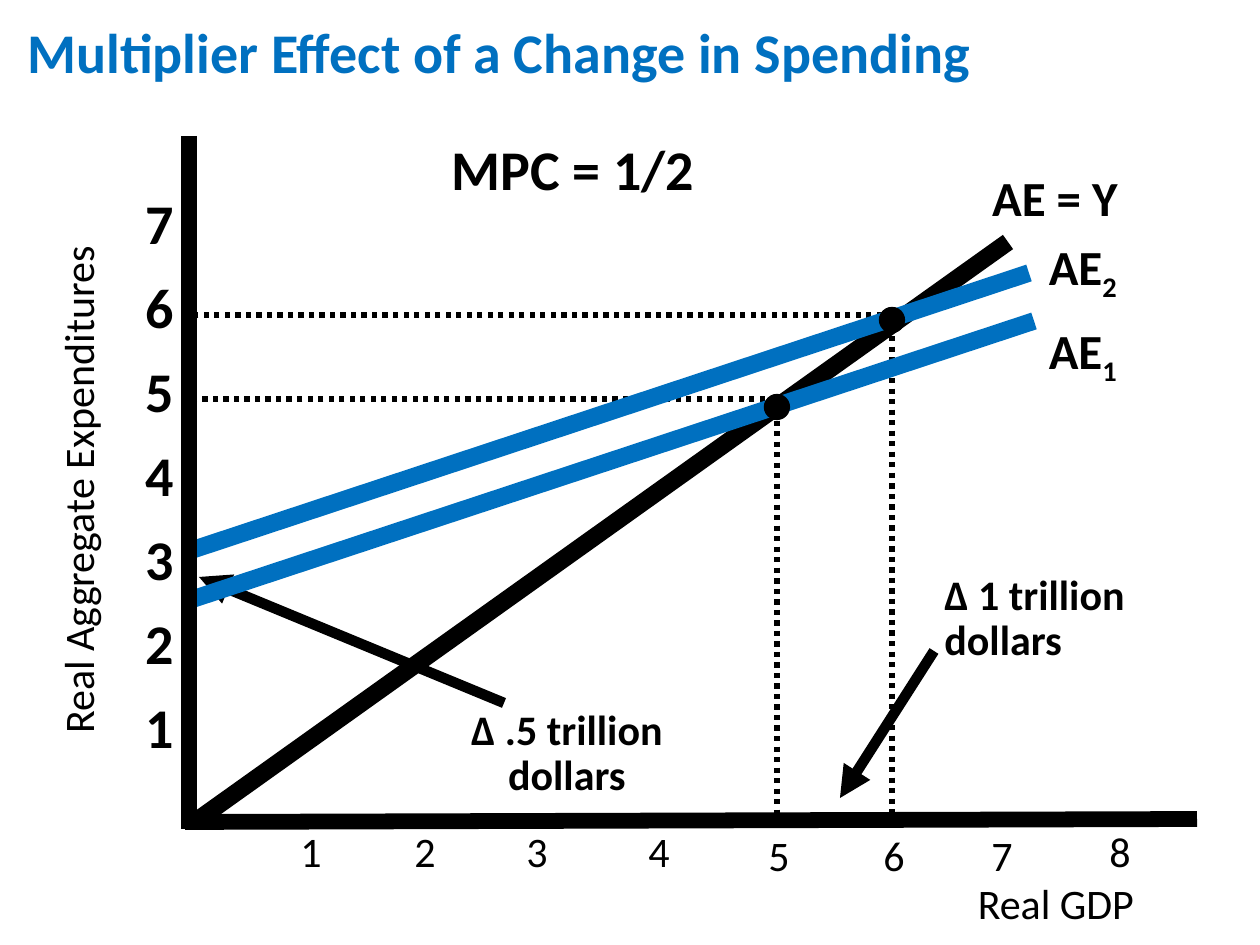
from dataclasses import dataclass

from lxml import etree
from pptx import Presentation
from pptx import util as u
from pptx.dml.color import RGBColor
from pptx.enum import dml, shapes, text
from pptx.oxml.ns import qn

EMU_PER_PX = 914400 / 126


@dataclass(frozen=True)
class Theme:
    font: str = "Calibri"
    black: RGBColor = RGBColor(0x00, 0x00, 0x00)
    blue: RGBColor = RGBColor(0x00, 0x70, 0xC0)
    large: int = 32
    medium: int = 28
    small: int = 24
    curve: int = 10
    axis: int = 9
    arrow: int = 6
    guide: int = 3


THEME = Theme()
LEFT, CENTER, RIGHT = text.PP_ALIGN.LEFT, text.PP_ALIGN.CENTER, text.PP_ALIGN.RIGHT


def px(value):
    return u.Emu(round(value * EMU_PER_PX))


def add_label(slide, box, content, size, align=CENTER, bold=True,
              color=THEME.black, subscript="", rotation=0):
    shape = slide.shapes.add_textbox(*map(px, box))
    shape.rotation = rotation
    frame = shape.text_frame
    frame.word_wrap = True
    paragraph = frame.paragraphs[0]
    paragraph.alignment = align
    paragraph.line_spacing = 0.9
    for part in filter(None, (content, subscript)):
        run = paragraph.add_run()
        run.text = part
        run.font.name = THEME.font
        run.font.size = u.Pt(size)
        run.font.bold = bold
        run.font.color.rgb = color
        if part is subscript:
            run._r.get_or_add_rPr().set("baseline", "-25000")


def add_line(slide, start, end, width, color=THEME.black, dotted=False, arrow=False):
    connector = slide.shapes.add_connector(
        shapes.MSO_CONNECTOR.STRAIGHT, *map(px, start + end))
    connector.line.color.rgb = color
    connector.line.width = u.Pt(width)
    if dotted:
        connector.line.dash_style = dml.MSO_LINE.ROUND_DOT
    if arrow:
        tail = etree.SubElement(connector.line._get_or_add_ln(), qn("a:tailEnd"))
        tail.set("type", "triangle")
    etree.SubElement(connector._element.spPr, qn("a:effectLst"))


def add_point(slide, center_x, center_y, diameter=25):
    shape = slide.shapes.add_shape(
        shapes.MSO_SHAPE.OVAL, px(center_x - diameter / 2),
        px(center_y - diameter / 2), px(diameter), px(diameter))
    shape.shadow.inherit = False
    shape.fill.solid()
    shape.fill.fore_color.rgb = THEME.black
    shape.line.color.rgb = THEME.black
    shape.line.width = u.Pt(0.75)


def add_scales(slide):
    for value in range(1, 8):
        add_label(slide, (94, 694 - 84 * (value - 1), 92, 74), str(value),
                  THEME.large, RIGHT)
    centers = (311, 425, 537, 659, 779, 894, 1002, 1120)
    for value, center in enumerate(centers, 1):
        top = 829 if 5 <= value <= 7 else 825
        add_label(slide, (center - 45, top, 90, 59), str(value),
                  THEME.small, bold=False)


def add_guides(slide):
    for start, end in (
        ((882, 315), (189, 315)),
        ((892, 315), (892, 819)),
        ((765, 399), (186, 399)),
        ((777, 410), (777, 829)),
    ):
        add_line(slide, start, end, THEME.guide, dotted=True)


def add_captions(slide):
    add_label(slide, (15, 19, 1197, 74), "Multiplier Effect of a Change in Spending",
              THEME.large, LEFT, color=THEME.blue)
    add_label(slide, (401, 136, 357, 74), "MPC = 1/2 ", THEME.large)
    add_label(slide, (966, 168, 189, 66), "AE = Y ", THEME.medium)
    for subscript, top in (("2 ", 231), ("1 ", 315)):
        add_label(slide, (1018, top, 136, 66), "AE", THEME.medium, subscript=subscript)
    add_label(slide, (932, 568, 285, 103), "Δ 1 trillion dollars", THEME.small, LEFT)
    add_label(slide, (441, 703, 252, 105), "Δ .5 trillion dollars", THEME.small)
    add_label(slide, (905, 877, 302, 58), "Real GDP", THEME.small, bold=False)
    add_label(slide, (-232, 461, 625, 58), "Real Aggregate Expenditures",
              THEME.small, bold=False, rotation=270)


def add_curves(slide):
    add_line(slide, (934, 651), (840, 798), THEME.arrow, arrow=True)
    add_line(slide, (199, 819), (1008, 242), THEME.curve)
    add_line(slide, (189, 551), (1029, 273), THEME.curve, THEME.blue)
    add_point(slide, 892, 320)
    add_line(slide, (504, 703), (199, 577), THEME.arrow, arrow=True)
    add_line(slide, (185, 822), (1197, 819), THEME.axis)
    add_line(slide, (193, 599), (1034, 321), THEME.curve, THEME.blue)
    add_point(slide, 777, 407)
    add_line(slide, (189, 136), (189, 829), THEME.axis)


def main():
    presentation = Presentation()
    presentation.slide_width = px(1260)
    presentation.slide_height = px(945)
    slide = presentation.slides.add_slide(presentation.slide_layouts[6])
    add_scales(slide)
    add_guides(slide)
    add_captions(slide)
    add_curves(slide)
    presentation.save("out.pptx")


if __name__ == "__main__":
    main()
